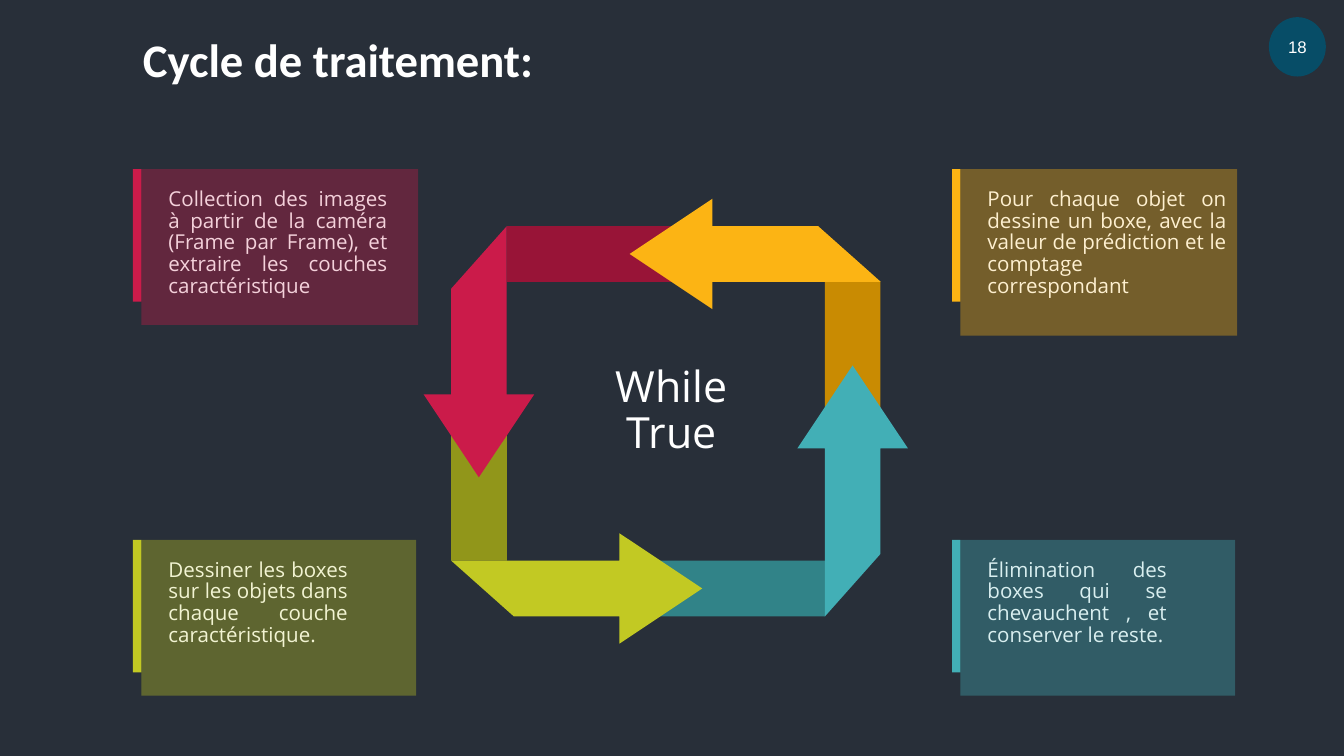
from lxml import etree
from pptx import Presentation
from pptx.dml.color import RGBColor
from pptx.enum import shapes as kinds, text as txt
from pptx.oxml import ns
from pptx.util import Pt

NIGHT = RGBColor(0x28, 0x2F, 0x39)
WHITE = RGBColor(0xFF, 0xFF, 0xFF)
NAVY = RGBColor(0x07, 0x4D, 0x67)
RED = RGBColor(0xCB, 0x1B, 0x4A)
WINE = RGBColor(0x98, 0x14, 0x37)
LIME = RGBColor(0xC2, 0xC9, 0x23)
OLIVE = RGBColor(0x91, 0x96, 0x1A)
GOLD = RGBColor(0xFC, 0xB4, 0x14)
OCHRE = RGBColor(0xC9, 0x8B, 0x02)
AQUA = RGBColor(0x42, 0xAF, 0xB6)
TEAL = RGBColor(0x31, 0x83, 0x88)

BODY = "Open Sans"
RECT = kinds.MSO_SHAPE.RECTANGLE
OVAL = kinds.MSO_SHAPE.OVAL
LEFT = txt.PP_ALIGN.LEFT
MID = txt.PP_ALIGN.CENTER
FULL = txt.PP_ALIGN.JUSTIFY


def paint(shape, color, alpha=None):
    """Give a shape a flat fill, optionally see-through, without line or shadow."""
    shape.shadow.inherit = False
    shape.line.fill.background()
    shape.fill.solid()
    shape.fill.fore_color.rgb = color
    if alpha is not None:
        tint = shape.fill._xPr.find(".//" + ns.qn("a:srgbClr"))
        etree.SubElement(tint, ns.qn("a:alpha")).set("val", str(alpha * 1000))
    return shape


def block(slide, box, color, alpha=None, kind=RECT):
    """Add a filled preset shape in a box."""
    return paint(slide.shapes.add_shape(kind, *map(Pt, box)), color, alpha)


def write(shape, words, size, font=BODY, bold=False, align=LEFT,
          gap=None, anchor=txt.MSO_ANCHOR.TOP):
    """Set the text of a shape and its format."""
    frame = shape.text_frame
    frame.word_wrap = True
    frame.vertical_anchor = anchor
    frame.margin_left = frame.margin_right = Pt(5.4)
    frame.margin_top = frame.margin_bottom = Pt(2.7)
    para = frame.paragraphs[0]
    para.alignment = align
    if gap:
        para.line_spacing = gap
    run = para.add_run()
    run.text = words
    run.font.size = Pt(size)
    run.font.name = font
    run.font.bold = bold
    run.font.color.rgb = WHITE


def label(slide, box, words, size, **look):
    """Add a text box."""
    write(slide.shapes.add_textbox(*map(Pt, box)), words, size, **look)


def head(slide, box):
    """Place the title and the page badge."""
    x, y, w, h = box
    badge = block(slide, (x + w - 40.2, y + 9.2, 30.5, 31.8), NAVY, kind=OVAL)
    write(badge, "18", 9, font="Arial", align=MID,
          anchor=txt.MSO_ANCHOR.MIDDLE)
    label(slide, (x + 71.2, y + 13.7, 571, h), "Cycle de traitement:", 25,
          font="Calibri", bold=True)


def card(slide, box, color, words, wide, tall):
    """Place a note under a tinted veil with an accent bar on its left."""
    x, y, w, h = box
    veil = (x + 4.5, y, w - 4.5, h)
    block(slide, veil, color, 20)
    label(slide, (x + 13.6, y + 8, wide, tall), words, 11,
          align=FULL, gap=0.88)
    block(slide, veil, color, 20)
    block(slide, (x, y, 4.5, 71), color)


def arrow(slide, tip, way, color):
    """Draw a folded arrow whose long edge lies to the left of its way."""
    (x, y), (dx, dy) = tip, way
    shape = [(0, 0), (44.4, 29.6), (44.4, 14.9), (134.5, 14.9),
             (101, -14.9), (44.4, -14.9), (44.4, -29.6)]
    dots = [(Pt(x - back * dx + side * dy), Pt(y - back * dy - side * dx))
            for back, side in shape]
    pen = slide.shapes.build_freeform(*dots[0])
    pen.add_line_segments(dots[1:], close=True)
    paint(pen.convert_to_shape(), color)


def cycle(slide, box):
    """Place the ring of four ribbons and arrows around its caption."""
    x, y, w, h = box
    band = 29.8
    mid = band / 2
    right, low = x + w - band, y + h - band
    label(slide, (x + 67.2, y + 72, 102, 60), "While True", 23,
          align=MID, gap=0.89)
    block(slide, (right, y + band, band, 74), OCHRE)
    block(slide, (right - 101, low, 101, band), TEAL)
    arrow(slide, (right + mid, y + 74.6), (0, -1), AQUA)
    block(slide, (x, low - 83.5, band, 83.5), OLIVE)
    arrow(slide, (x + 134.5, low + mid), (1, 0), LIME)
    block(slide, (x + band, y, 101, band), WINE)
    arrow(slide, (x + 95.6, y + mid), (-1, 0), GOLD)
    arrow(slide, (x + mid, y + 134.5), (0, 1), RED)


def main():
    """Build and save the slide."""
    deck = Presentation()
    deck.slide_width, deck.slide_height = Pt(720), Pt(405)
    slide = deck.slides.add_slide(deck.slide_layouts[6])
    slide.background.fill.solid()
    slide.background.fill.fore_color.rgb = NIGHT

    head(slide, (0, 0, 720, 51))
    near, far, top, low = 71.2, 510, 90.6, 289.2
    card(slide, (near, top, 152.8, 83.5), RED,
         "Collection des images à partir de la caméra (Frame par Frame), "
         "et extraire les couches caractéristique", 128.2, 71)
    card(slide, (near, low, 151.8, 83.5), LIME,
         "Dessiner les boxes sur les objets dans chaque couche "
         "caractéristique.", 107, 56)
    card(slide, (far, top, 152.8, 89.3), GOLD,
         "Pour chaque objet on dessine un boxe, avec la valeur de "
         "prédiction et le comptage correspondant", 139, 81)
    card(slide, (far, low, 151.8, 83.5), AQUA,
         "Élimination des boxes qui se chevauchent , et conserver le "
         "reste.", 107, 56)
    cycle(slide, (241.7, 121.2, 230, 209))
    deck.save("out.pptx")


if __name__ == "__main__":
    main()
